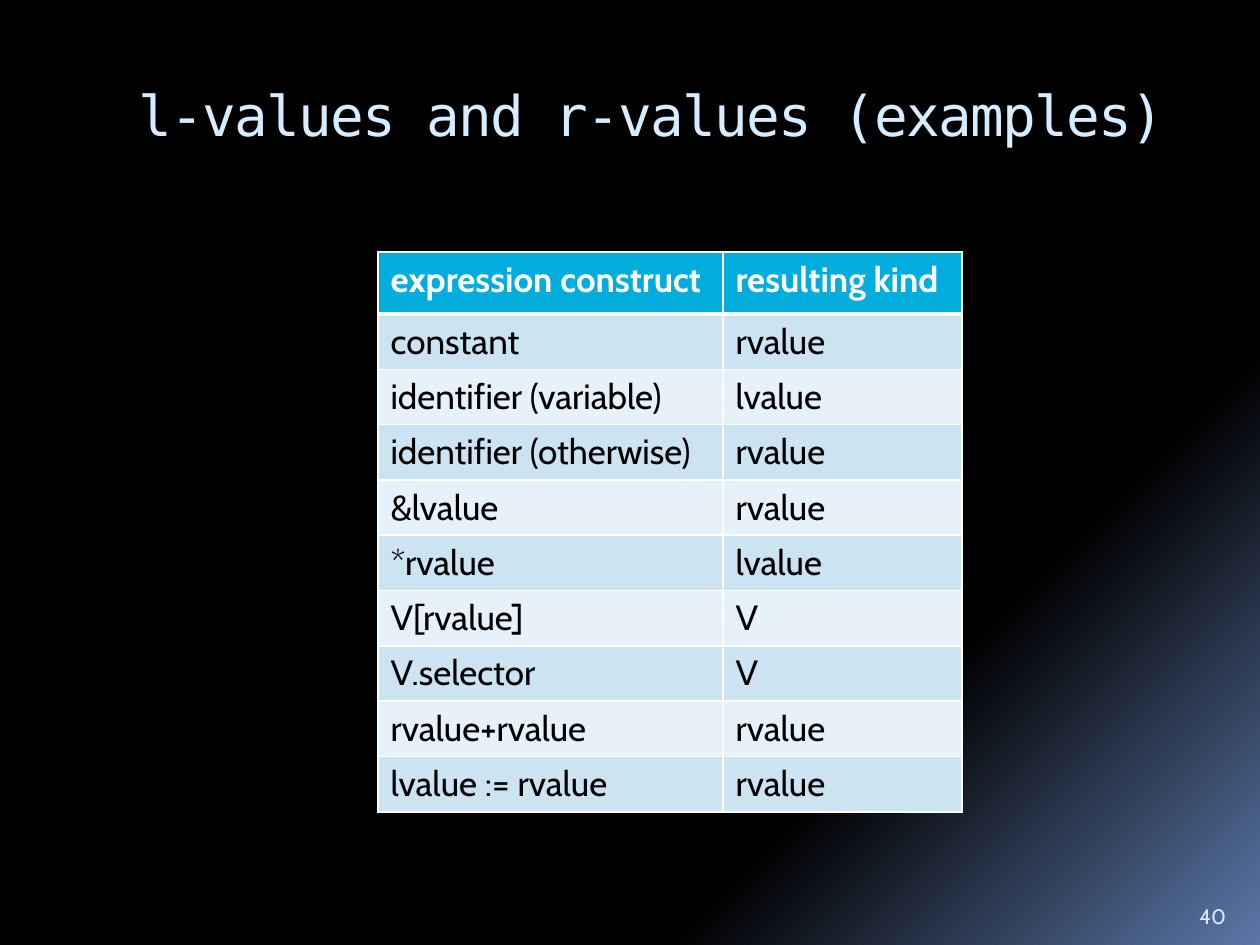
from lxml.etree import SubElement as Sub
from pptx import Presentation
from pptx.dml.color import RGBColor as RGB
from pptx.enum.text import MSO_ANCHOR as Anchor
from pptx.oxml.ns import qn
from pptx.util import Pt

PX = 914400 // 126
BLACK = RGB(0, 0, 0)
WHITE = RGB(255, 255, 255)
BLUE = RGB(0x5B, 0x77, 0xA8)
ICE = RGB(0xD6, 0xEC, 0xFF)
CYAN = RGB(0x00, 0xAD, 0xDC)
BANDS = RGB(0xCC, 0xE3, 0xF2), RGB(0xE7, 0xF1, 0xF9)

ROWS = [
    ("expression construct", "resulting kind"),
    ("constant", "rvalue"),
    ("identifier (variable)", "lvalue"),
    ("identifier (otherwise)", "rvalue"),
    ("&lvalue", "rvalue"),
    ("*rvalue", "lvalue"),
    ("V[rvalue]", "V"),
    ("V.selector", "V"),
    ("rvalue+rvalue", "rvalue"),
    ("lvalue := rvalue", "rvalue"),
]
COLS = 345, 239
HEAD, LINE = 62, 52
STOPS = (0.73, BLACK), (1, BLUE)
TEXTS = [
    ("l-values and r-values (examples)", (126, 71, 1071, 126), 10, Anchor.TOP,
     dict(name="DejaVu Sans Mono", size=Pt(32)), -100),
    ("40", (1187, 885, 63, 50), 6, Anchor.BOTTOM,
     dict(name="Cabin", size=Pt(12)), 0),
]


def px(*nums):
    return [n * PX for n in nums]


def style(font, color, form):
    font.color.rgb = color
    for key, val in form.items():
        setattr(font, key, val)


def edge(cell, side, width):
    line = Sub(cell._tc.get_or_add_tcPr(), qn("a:ln" + side), w=str(Pt(width)))
    Sub(Sub(line, qn("a:solidFill")), qn("a:srgbClr"), val=str(WHITE))


def add_text(slide, text, box, inset, anchor, form, gap):
    frame = slide.shapes.add_textbox(*px(*box)).text_frame
    frame.word_wrap = True
    frame.vertical_anchor = anchor
    frame.margin_top = inset * PX
    run = frame.paragraphs[0].add_run()
    run.text = text
    style(run.font, ICE, form)
    if gap:
        run.font._element.set("spc", str(gap))


def add_grid(slide):
    high = HEAD + LINE * (len(ROWS) - 1)
    box = px(378, 252, sum(COLS), high)
    grid = slide.shapes.add_table(len(ROWS), len(COLS), *box).table
    for col, wide in zip(grid.columns, COLS):
        col.width = wide * PX
    for r, row in enumerate(ROWS):
        top = r == 0
        grid.rows[r].height = (HEAD if top else LINE) * PX
        for c, text in enumerate(row):
            cell = grid.cell(r, c)
            cell.text = text
            form = dict(name="Cabin", size=Pt(20), bold=top)
            run = cell.text_frame.paragraphs[0].runs[0]
            style(run.font, WHITE if top else BLACK, form)
            for side in "LRTB":
                thick = (top and side == "B") or (r == 1 and side == "T")
                edge(cell, side, 3 if thick else 1)
            cell.fill.solid()
            cell.fill.fore_color.rgb = CYAN if top else BANDS[(r - 1) % 2]


def main():
    deck = Presentation()
    deck.slide_width, deck.slide_height = px(1260, 945)
    slide = deck.slides.add_slide(deck.slide_layouts[6])
    fill = slide.background.fill
    fill.gradient()
    fill.gradient_angle = 315
    for stop, (pos, color) in zip(fill.gradient_stops, STOPS):
        stop.position = pos
        stop.color.rgb = color
    add_grid(slide)
    for item in TEXTS:
        add_text(slide, *item)
    deck.save("out.pptx")


if __name__ == "__main__":
    main()
